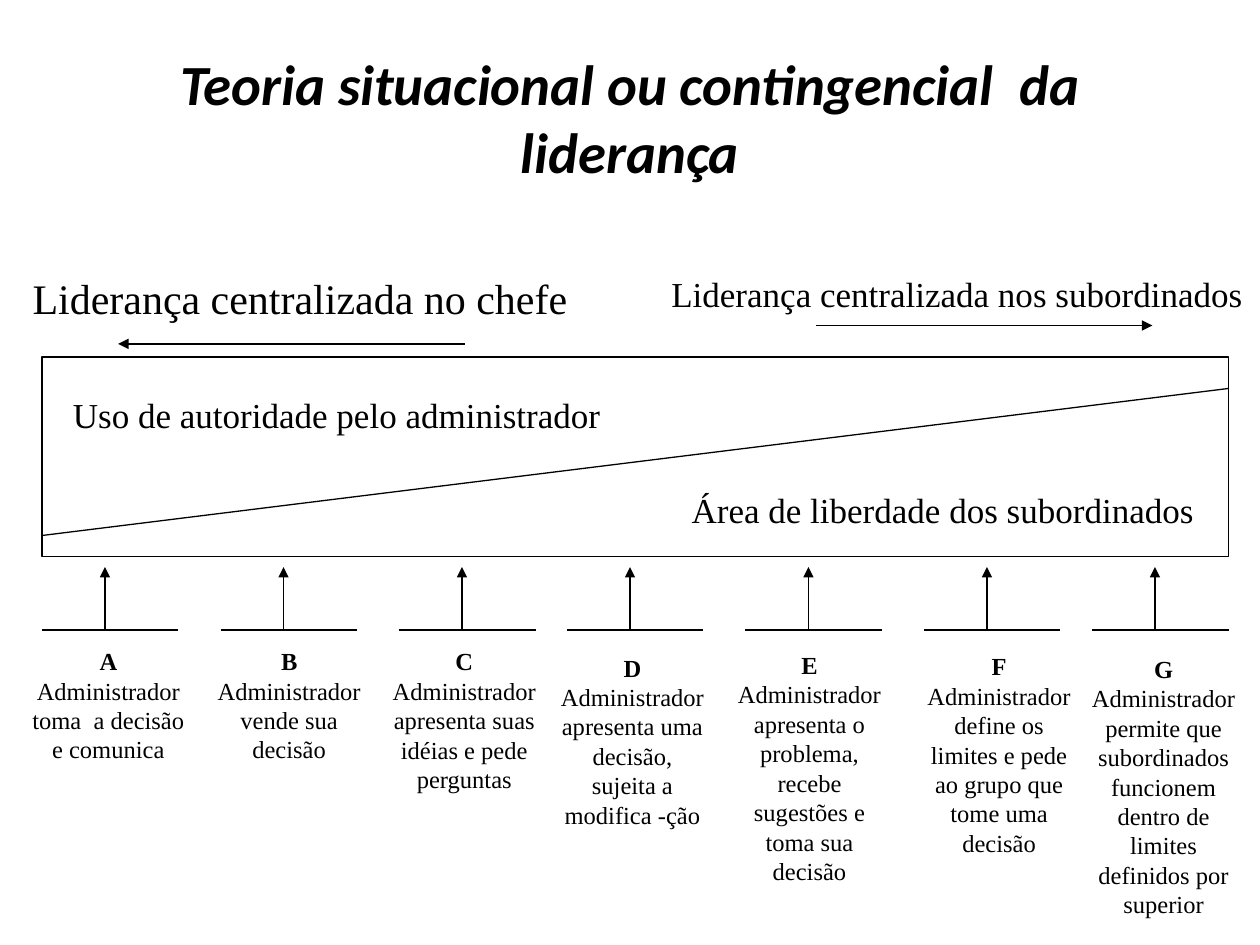
"""Build the slide on the situational theory of leadership."""
from lxml import etree
from pptx import Presentation
from pptx.dml.color import RGBColor
from pptx.enum.shapes import MSO_CONNECTOR, MSO_SHAPE
from pptx.enum.text import MSO_ANCHOR, MSO_AUTO_SIZE, PP_ALIGN
from pptx.oxml.ns import qn
from pptx.util import Inches, Pt

BLACK = RGBColor(0, 0, 0)
SERIF = "Times New Roman"
STRAIGHT = MSO_CONNECTOR.STRAIGHT
RECTANGLE = MSO_SHAPE.RECTANGLE
CENTER = PP_ALIGN.CENTER
MIDDLE = MSO_ANCHOR.MIDDLE
GROW = MSO_AUTO_SIZE.SHAPE_TO_FIT_TEXT
FIXED = MSO_AUTO_SIZE.NONE

TITLE = "Teoria situacional ou contingencial  da liderança"

# text, size, (left, top, width, height)
LABELS = [
    ("Uso de autoridade pelo administrador", 20, (0.48, 3.07, 4.42, 0.44)),
    ("Área de liberdade dos subordinados", 20, (5.39, 3.83, 4.22, 0.44)),
    ("Liderança centralizada no chefe", 24, (0.16, 2.11, 4.48, 0.51)),
    ("Liderança centralizada nos subordinados", 20, (5.23, 2.11, 4.77, 0.44)),
]

# letter, stem column, description, (left, top, width, height)
STYLES = [
    ("A", 10, "Administrador toma  a decisão e comunica", (0.15, 5.08, 1.42, 1.04)),
    ("B", 27, "Administrador vende sua decisão", (1.62, 5.08, 1.35, 1.04)),
    ("C", 44, "Administrador apresenta suas idéias e pede perguntas",
     (2.99, 5.08, 1.39, 1.28)),
    ("D", 60, "Administrador apresenta uma decisão, sujeita a modifica -ção",
     (4.34, 5.13, 1.36, 1.51)),
    ("E", 77, "Administrador apresenta o problema, recebe sugestões e toma sua decisão",
     (5.74, 5.11, 1.37, 1.99)),
    ("F", 94, "Administrador define os limites e pede ao grupo que tome uma decisão",
     (7.26, 5.12, 1.34, 1.75)),
    ("G", 110, "Administrador permite que subordinados funcionem dentro de limites "
     "definidos por superior", (8.52, 5.14, 1.43, 2.22)),
]

COLUMNS = 120
LEFT, RIGHT, TOP, BOTTOM = 4, 117, 34, 53
BAR_ROW, ARROW_ROW = 60, 54
BAR_WIDTH, STEM_OFFSET = 13, 6

deck = Presentation()
deck.slide_width, deck.slide_height = Inches(10), Inches(7.5)
unit = deck.slide_width / COLUMNS
page = deck.slides.add_slide(deck.slide_layouts[5])


def grid(*steps):
    return [round(step * unit) for step in steps]


def set_font(font, size, name=SERIF):
    font.name, font.size = name, Pt(size)
    font.color.rgb = BLACK


def add_line(start, end, arrow=False):
    line = page.shapes.add_connector(STRAIGHT, *grid(*start, *end))
    line.line.color.rgb = BLACK
    line.line.width = Pt(0.75)
    if arrow:
        outline = line.line._get_or_add_ln()
        etree.SubElement(outline, qn("a:tailEnd"), type="triangle")
    etree.SubElement(line._element.spPr, qn("a:effectLst"))


def add_text_box(place, wrap):
    frame = page.shapes.add_textbox(*map(Inches, place)).text_frame
    frame.word_wrap = wrap
    frame.auto_size = GROW
    return frame


title = page.shapes.title
title.left, title.top, title.width, title.height = map(Inches, (0.5, 0.3, 9, 1.25))
title.text_frame.text = TITLE
title.text_frame.auto_size = FIXED
title.text_frame.vertical_anchor = MIDDLE
heading = title.text_frame.paragraphs[0]
heading.alignment = CENTER
set_font(heading.font, 32.4, "Calibri")
heading.font.bold = heading.font.italic = True

area = page.shapes.add_shape(RECTANGLE, *grid(LEFT, TOP, RIGHT - LEFT, BOTTOM - TOP))
area.shadow.inherit = False
area.fill.background()
area.line.color.rgb = BLACK
area.line.width = Pt(0.75)
add_line((LEFT, 51), (RIGHT, 37))
add_line((44.25, 32.75), (11.25, 32.75), arrow=True)
add_line((77.75, 31), (109.75, 31), arrow=True)

for text, size, place in LABELS:
    frame = add_text_box(place, wrap=False)
    frame.text = text
    set_font(frame.paragraphs[0].font, size)

for letter, stem, description, place in STYLES:
    bar_left = stem - STEM_OFFSET
    add_line((bar_left, BAR_ROW), (bar_left + BAR_WIDTH, BAR_ROW))
    add_line((stem, BAR_ROW), (stem, ARROW_ROW), arrow=True)
    frame = add_text_box(place, wrap=True)
    frame.text = letter
    frame.paragraphs[0].runs[0].font.bold = True
    frame.add_paragraph().text = description
    for para in frame.paragraphs:
        para.alignment = CENTER
        set_font(para.font, 14)

deck.save("out.pptx")
